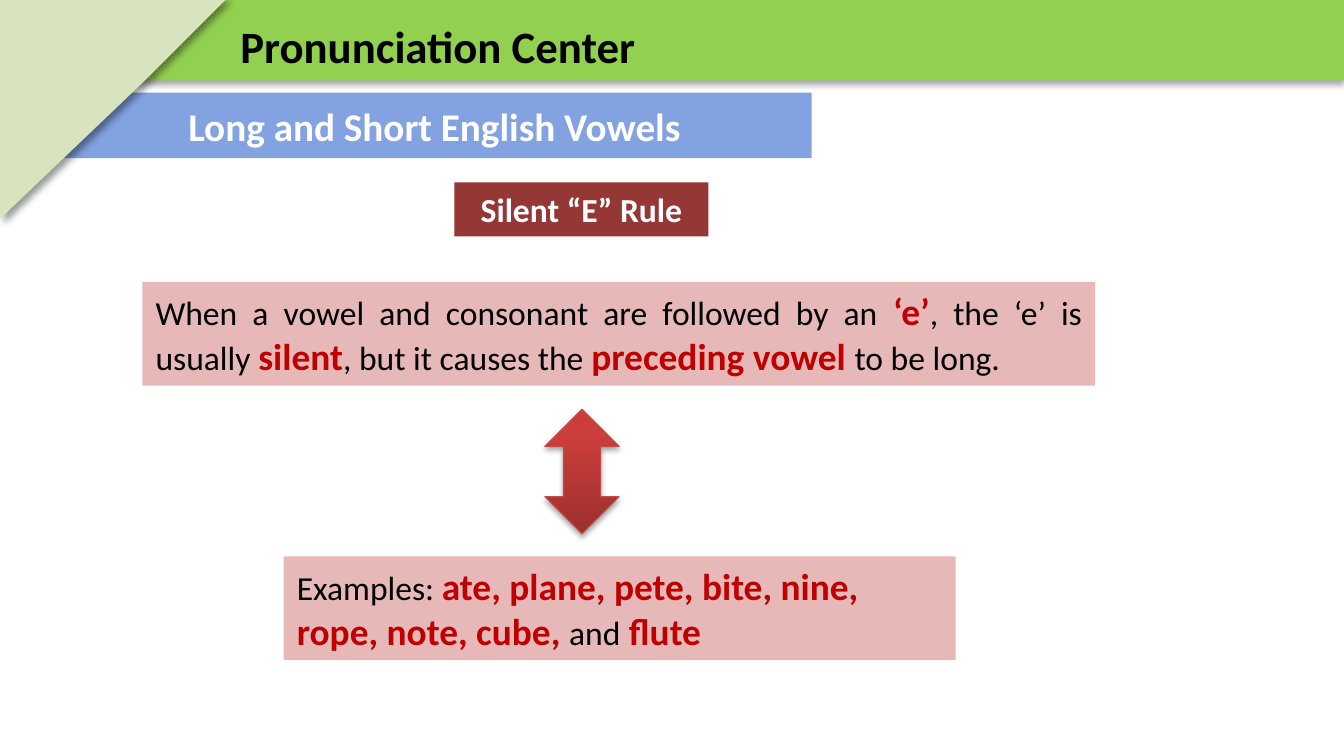
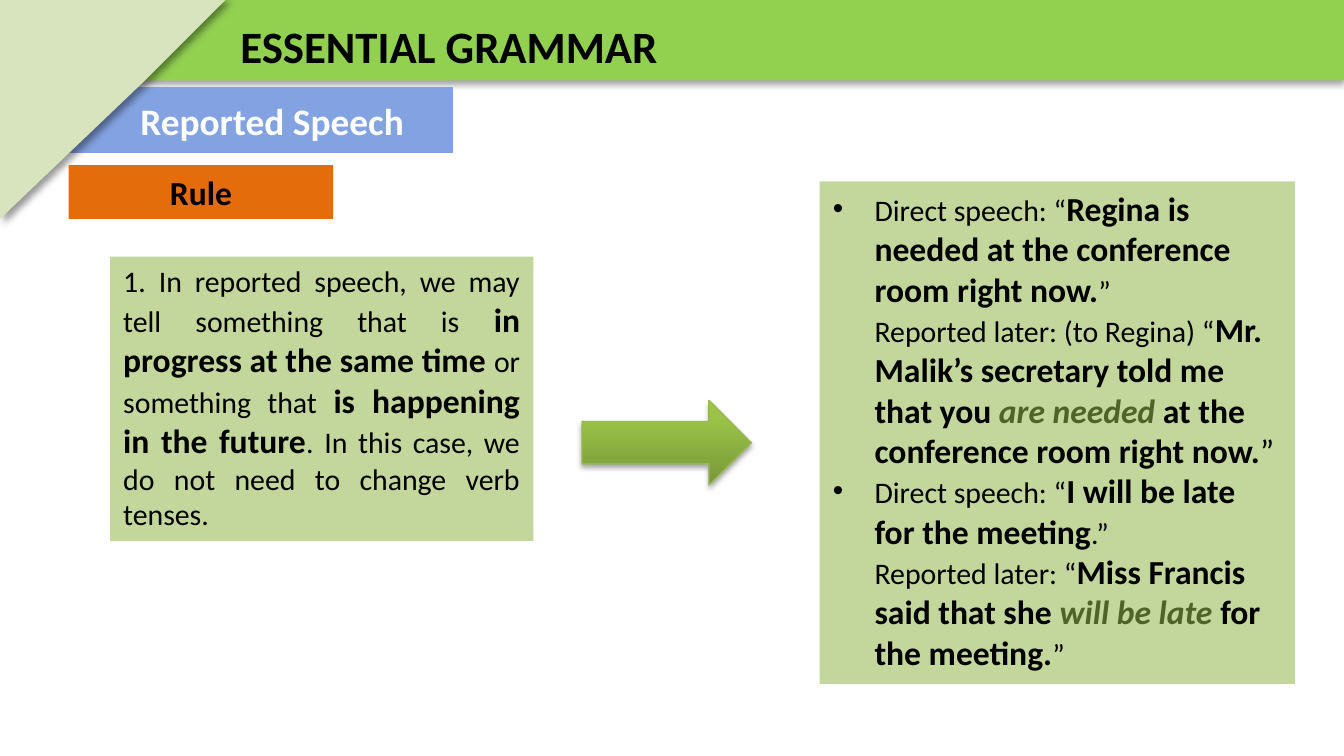
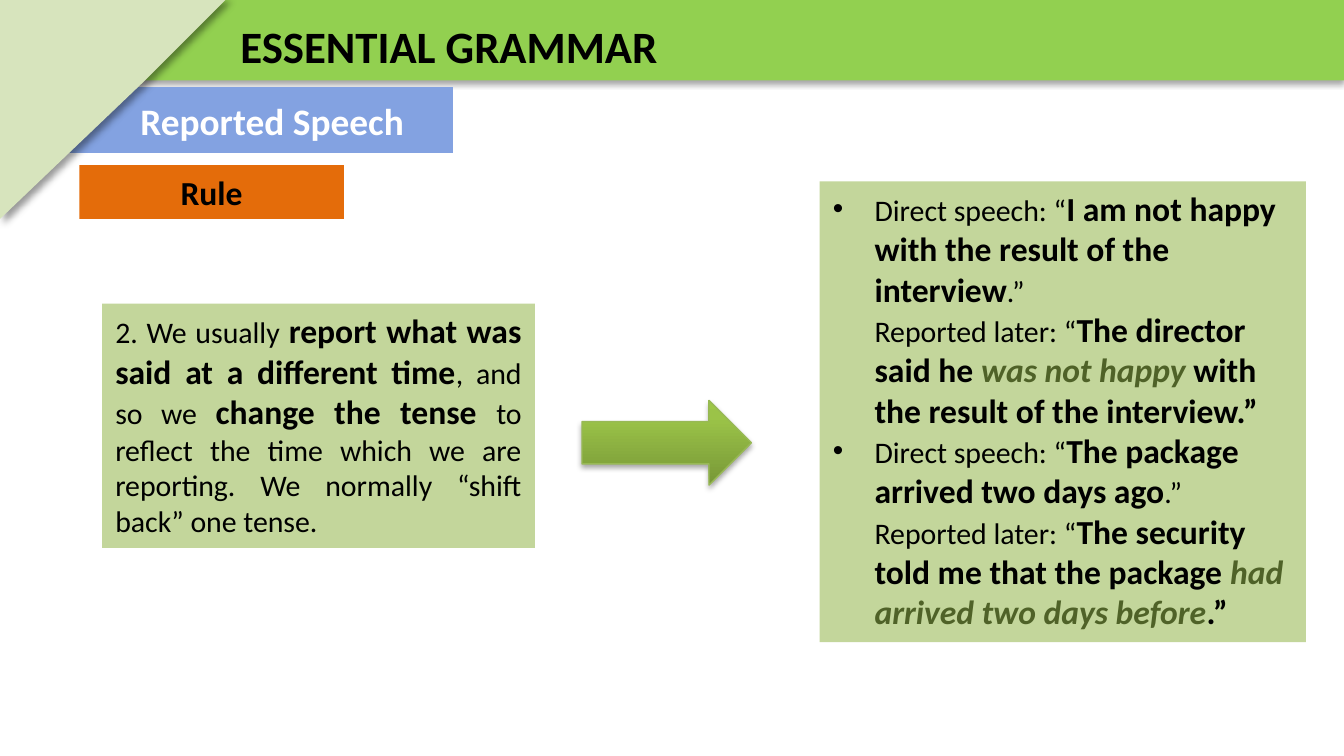
from collections import namedtuple

from pptx import Presentation
from pptx.dml.color import RGBColor
from pptx.enum.shapes import MSO_SHAPE
from pptx.enum.text import MSO_ANCHOR, MSO_AUTO_SIZE, PP_ALIGN
from pptx.oxml import parse_xml
from pptx.oxml.ns import nsdecls, qn
from pptx.util import Cm, Pt

RECTANGLE = MSO_SHAPE.RECTANGLE
UP_DOWN_ARROW = MSO_SHAPE.UP_DOWN_ARROW
RIGHT_ARROW = MSO_SHAPE.RIGHT_ARROW
LEFT, CENTER, JUSTIFY = PP_ALIGN.LEFT, PP_ALIGN.CENTER, PP_ALIGN.JUSTIFY
TOP, MIDDLE = MSO_ANCHOR.TOP, MSO_ANCHOR.MIDDLE
GROW, FIXED = MSO_AUTO_SIZE.SHAPE_TO_FIT_TEXT, MSO_AUTO_SIZE.NONE

# Colours
BLACK = RGBColor(0x00, 0x00, 0x00)
WHITE = RGBColor(0xFF, 0xFF, 0xFF)
BAND_GREEN = RGBColor(0x92, 0xD0, 0x50)
CORNER_GREEN = RGBColor(0xD7, 0xE4, 0xBD)
PANEL_GREEN = RGBColor(0xC3, 0xD6, 0x9B)
DARK_GREEN = RGBColor(0x4F, 0x62, 0x28)
TOPIC_BLUE = RGBColor(0x83, 0xA2, 0xE1)
LABEL_RED = RGBColor(0x95, 0x37, 0x35)
LABEL_ORANGE = RGBColor(0xE4, 0x6C, 0x0A)
PANEL_PINK = RGBColor(0xE6, 0xB9, 0xB8)
ACCENT_RED = RGBColor(0xC0, 0x00, 0x00)
ARROW_RED_LINE = RGBColor(0xBF, 0x4C, 0x48)
ARROW_GREEN_LINE = RGBColor(0x98, 0xB9, 0x55)

# Gradients as (percent, colour), from bottom to top
RED_STOPS = [(0, RGBColor(0x9C, 0x2F, 0x2D)), (80, RGBColor(0xCB, 0x3E, 0x3A)),
             (100, RGBColor(0xCE, 0x3B, 0x37))]
GREEN_STOPS = [(0, RGBColor(0x77, 0x97, 0x37)), (80, RGBColor(0x9B, 0xC3, 0x48)),
               (100, RGBColor(0x9D, 0xC7, 0x46))]

# Shadows as (opacity percent, blur, distance, angle)
SOFT_SHADOW = (35, Pt(3.1), Pt(1.8), 90)
CORNER_SHADOW = (40, Pt(4), Pt(3), 45)

# Text styles
FONT = "Calibri"
Style = namedtuple("Style", "size color bold italic", defaults=(BLACK, False, False))
TITLE = Style(24, bold=True)
BODY = Style(18)
RED_BOLD = Style(20, ACCENT_RED, True)
SMALL = Style(16)
STRONG = Style(18, bold=True)
VERB = Style(18, DARK_GREEN, True, True)
LINE_BREAK = ("\v", SMALL)


class Deck:
    """Holds the shared style and the slide being built."""

    def __init__(self):
        self.presentation = Presentation()
        self.presentation.slide_width = Cm(25.4)
        self.presentation.slide_height = Cm(14.29)
        self.layout = self.presentation.slide_layouts.get_by_name("Title Only")
        self.slide = None

    def new_slide(self, title, title_width, topic, topic_box, topic_size, topic_indent=0):
        self.slide = self.presentation.slides.add_slide(self.layout)
        if len(self.presentation.slides) == 1:
            self.add_band_to_layout()
        # Title
        placeholder = self.slide.shapes.title
        placeholder.left, placeholder.top = Cm(4.29), Cm(0.23)
        placeholder.width, placeholder.height = Cm(title_width), Cm(1.27)
        self.set_text(placeholder, [[(title, TITLE)]], wrap=False)
        # Topic strip, partly covered by the corner
        strip = self.add_block(topic_box, TOPIC_BLUE,
                               [[(topic, Style(topic_size, WHITE, True))]],
                               CENTER, anchor=MIDDLE, auto_size=FIXED, inset=0.13)
        if topic_indent:
            self.set_indent(strip.text_frame.paragraphs[0], topic_indent)
        self.add_corner()

    def add_band_to_layout(self):
        band = self.add_shape(RECTANGLE, (0, -0.03, 25.4, 1.55), BAND_GREEN)
        self.add_shadow(band, SOFT_SHADOW)
        self.layout.shapes.element.insert(2, band.element)

    def add_corner(self):
        points = [(0, -0.03), (0, 4.14), (2.69, 1.57)]
        builder = self.slide.shapes.build_freeform(Cm(4.29), Cm(-0.03))
        builder.add_line_segments([(Cm(x), Cm(y)) for x, y in points], close=True)
        corner = builder.convert_to_shape()
        self.fill(corner, CORNER_GREEN)
        self.add_shadow(corner, CORNER_SHADOW)

    def add_shape(self, kind, box, color):
        shape = self.slide.shapes.add_shape(kind, *map(Cm, box))
        self.fill(shape, color)
        return shape

    def add_block(self, box, color, paragraphs, align=LEFT, **options):
        shape = self.add_shape(RECTANGLE, box, color)
        self.set_text(shape, paragraphs, align, **options)
        return shape

    def add_arrow(self, kind, box, stops, line_color):
        arrow = self.add_shape(kind, box, line_color)
        arrow.line.color.rgb = line_color
        arrow.line.width = Pt(0.75)
        stop_xml = "".join(f'<a:gs pos="{percent * 1000}"><a:srgbClr val="{color}"/></a:gs>'
                           for percent, color in stops)
        gradient = parse_xml(f'<a:gradFill {nsdecls("a")} rotWithShape="1"><a:gsLst>{stop_xml}'
                             '</a:gsLst><a:lin ang="16200000" scaled="0"/></a:gradFill>')
        properties = arrow.element.spPr
        properties.replace(properties.find(qn("a:solidFill")), gradient)
        self.add_shadow(arrow, SOFT_SHADOW)

    def fill(self, shape, color):
        shape.fill.solid()
        shape.fill.fore_color.rgb = color
        shape.line.fill.background()
        shape.shadow.inherit = False

    def add_shadow(self, shape, shadow):
        opacity, blur, distance, angle = shadow
        shape.element.spPr.find(qn("a:effectLst")).append(parse_xml(
            f'<a:outerShdw {nsdecls("a")} blurRad="{blur}" dist="{distance}" '
            f'dir="{angle * 60000}" rotWithShape="0"><a:srgbClr val="{BLACK}">'
            f'<a:alpha val="{opacity * 1000}"/></a:srgbClr></a:outerShdw>'))

    def set_text(self, shape, paragraphs, align=LEFT, anchor=TOP, auto_size=GROW,
                 wrap=True, inset=None, bullets=False):
        frame = shape.text_frame
        frame.word_wrap = wrap
        frame.auto_size = auto_size
        frame.vertical_anchor = anchor
        if inset is not None:
            frame.margin_left = frame.margin_right = Cm(inset)
            frame.margin_top = frame.margin_bottom = Cm(inset)
        for index, pieces in enumerate(paragraphs):
            paragraph = frame.add_paragraph() if index else frame.paragraphs[0]
            paragraph.alignment = align
            if bullets:
                self.set_indent(paragraph, 0.79, -0.79)
                self.add_bullet(paragraph)
            for piece in pieces:
                if piece is LINE_BREAK:
                    paragraph.add_line_break()
                else:
                    self.add_run(paragraph, *piece)

    def add_run(self, paragraph, text, style):
        run = paragraph.add_run()
        run.text = text
        run.font.name = FONT
        run.font.size = Pt(style.size)
        run.font.color.rgb = style.color
        run.font.bold = style.bold
        run.font.italic = style.italic

    def set_indent(self, paragraph, margin, first_line=0):
        properties = paragraph._p.get_or_add_pPr()
        properties.set("marL", str(Cm(margin)))
        properties.set("indent", str(Cm(first_line)))

    def add_bullet(self, paragraph):
        properties = paragraph._p.get_or_add_pPr()
        for xml in ('<a:buFont {} typeface="Arial"/>', '<a:buChar {} char="•"/>'):
            properties.append(parse_xml(xml.format(nsdecls("a"))))


def add_vowel_slide(deck):
    deck.new_slide("Pronunciation Center", 8.05, "Long and Short English Vowels",
                   (1.09, 1.75, 14.25, 1.24), 21)
    deck.add_block((8.59, 3.45, 4.8, 1.02), LABEL_RED,
                   [[("Silent “E” Rule", Style(18, WHITE, True))]], CENTER)
    deck.add_block((2.69, 5.33, 18.01, 1.96), PANEL_PINK, [[
        ("When a vowel and consonant are followed by an ", BODY), ("‘e’", RED_BOLD),
        (", the ‘e’ is usually ", BODY), ("silent", RED_BOLD),
        (", but it causes the ", BODY), ("preceding vowel ", RED_BOLD),
        ("to be long.", BODY)]], JUSTIFY)
    deck.add_arrow(UP_DOWN_ARROW, (10.3, 7.74, 1.4, 2.35), RED_STOPS, ARROW_RED_LINE)
    deck.add_block((5.36, 10.52, 12.7, 1.96), PANEL_PINK, [[
        ("Examples: ", BODY),
        ("ate, plane, pete, bite, nine, rope, note, cube, ", RED_BOLD),
        ("and", BODY), (" flute", RED_BOLD)]])


def add_grammar_slide(deck, label_left, rule_box, rule, examples_box, examples):
    deck.new_slide("ESSENTIAL GRAMMAR", 8.46, "Reported Speech",
                   (1.12, 1.65, 7.44, 1.24), 20, topic_indent=0.61)
    deck.add_block(rule_box, PANEL_GREEN, [rule], JUSTIFY)
    deck.add_block((label_left, 3.12, 5, 1.02), LABEL_ORANGE, [[("Rule", STRONG)]], CENTER)
    deck.add_arrow(RIGHT_ARROW, (11, 7.57, 3.2, 1.6), GREEN_STOPS, ARROW_GREEN_LINE)
    deck.add_block(examples_box, PANEL_GREEN, examples, bullets=True)


def main():
    deck = Deck()
    add_vowel_slide(deck)

    # Rule 1: same time or future
    add_grammar_slide(
        deck, 1.3, (2.08, 4.85, 8, 5.38),
        [("1. In reported speech, we may tell something that is ", SMALL),
         ("in progress at the same time ", STRONG), ("or something that ", SMALL),
         ("is happening in the future", STRONG),
         (". In this case, we do not need to change verb tenses.", SMALL)],
        (15.49, 3.43, 8.99, 9.5),
        [[("Direct speech: “", SMALL),
          ("Regina is needed at the conference room right now.", STRONG),
          ("”", SMALL), LINE_BREAK, ("Reported later: (to Regina) “", SMALL),
          ("Mr. Malik’s secretary told me that you", STRONG), (" are needed ", VERB),
          ("at the conference room right now.", STRONG), ("”", BODY)],
         [("Direct speech: “", SMALL), ("I will be late for the meeting", STRONG),
          (".”", SMALL), LINE_BREAK, ("Reported later: “", SMALL),
          ("Miss Francis said that she", STRONG), (" will be late ", VERB),
          ("for the meeting.", STRONG), ("”", SMALL)]])

    # Rule 2: shift back one tense
    add_grammar_slide(
        deck, 1.5, (1.93, 5.74, 8.18, 4.62),
        [("2. We usually ", SMALL), ("report what was said at a different time", STRONG),
         (", and so we ", SMALL), ("change the tense ", STRONG),
         ("to reflect the time which we are reporting. "
          "We normally “shift back” one tense.", SMALL)],
        (15.49, 3.43, 9.19, 8.71),
        [[("Direct speech: “", SMALL),
          ("I am not happy with the result of the interview", STRONG),
          (".”", SMALL), LINE_BREAK, ("Reported later: “", SMALL),
          ("The director said he ", STRONG), ("was not happy ", VERB),
          ("with the result of the interview.”", STRONG)],
         [("Direct speech: “", SMALL), ("The package arrived two days ago", STRONG),
          (".”", SMALL), LINE_BREAK, ("Reported later: “", SMALL),
          ("The security told me that the package ", STRONG),
          ("had arrived two days before", VERB), (".”", STRONG)]])

    deck.presentation.save("out.pptx")


if __name__ == "__main__":
    main()
